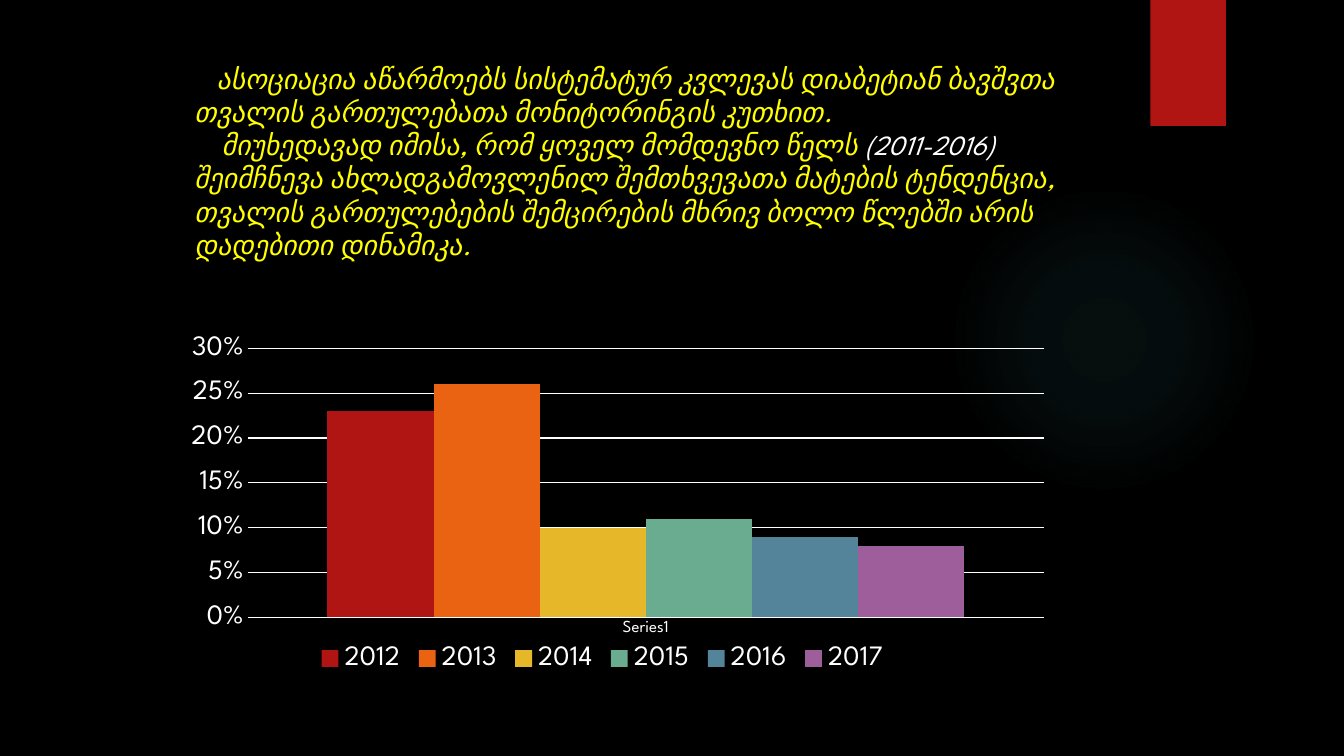
import dataclasses

import lxml.etree
import pptx
import pptx.chart.data
import pptx.dml.color
import pptx.enum.chart
import pptx.enum.shapes
import pptx.enum.text
import pptx.oxml
import pptx.oxml.ns
import pptx.util

Inches = pptx.util.Inches
Pt = pptx.util.Pt
RGB = pptx.dml.color.RGBColor.from_string
qn = pptx.oxml.ns.qn


@dataclasses.dataclass(frozen=True)
class Theme:
    font: str = "League Spartan"
    background: str = "000000"
    text: str = "FFFFFF"
    highlight: str = "FFFF00"
    accent: str = "B01513"
    glow: str = "50B9C1"
    title_size: float = 19.8
    axis_size: int = 20
    category_size: int = 12
    base_size: int = 10
    years: tuple = ("B01513", "EA6312", "E6B729", "6AAC90", "54849A", "9E5E9B")


THEME = Theme()

TITLE = [
    (0.22, [("ასოციაცია აწარმოებს სისტემატურ კვლევას დიაბეტიან ბავშვთა თვალის "
             "გართულებათა მონიტორინგის კუთხით.", THEME.highlight)]),
    (0.27, [("მიუხედავად იმისა, რომ ყოველ მომდევნო წელს ", THEME.highlight),
            ("(2011-2016)", THEME.text),
            (" შეიმჩნევა ახლადგამოვლენილ შემთხვევათა მატების ტენდენცია, თვალის "
             "გართულებების შემცირების მხრივ ბოლო წლებში არის დადებითი დინამიკა.",
             THEME.highlight)]),
]
RATES = {"2012": 0.23, "2013": 0.26, "2014": 0.10,
         "2015": 0.11, "2016": 0.09, "2017": 0.08}
PLOT_LAYOUT = {"x": 0.108, "y": 0.161, "w": 0.88, "h": 0.686}


def style_font(font, size, color):
    font.name = THEME.font
    font.size = Pt(size)
    font.color.rgb = RGB(color)


def add_glow(sp):
    stops = "".join(
        f'<a:gs pos="{pos}000"><a:srgbClr val="{THEME.glow}">'
        f'<a:alpha val="{alpha}000"/></a:srgbClr></a:gs>'
        for pos, alpha in ((0, 7), (36, 6), (69, 0), (100, 0)))
    grad = pptx.oxml.parse_xml(
        f'<a:gradFill {pptx.oxml.ns.nsdecls("a")} rotWithShape="1">'
        f'<a:gsLst>{stops}</a:gsLst><a:path path="circle">'
        '<a:fillToRect l="50000" t="50000" r="50000" b="50000"/>'
        '</a:path></a:gradFill>')
    sp.fill.background()
    no_fill = sp._element.spPr.find(qn("a:noFill"))
    sp._element.spPr.replace(no_fill, grad)


def add_decor(s, left, top, width, height):
    shapes = pptx.enum.shapes.MSO_SHAPE
    glow = s.shapes.add_shape(shapes.OVAL, Inches(left), Inches(top + 1.83),
                              Inches(width), Inches(height - 1.83))
    add_glow(glow)
    ribbon = s.shapes.add_shape(shapes.RECTANGLE, Inches(left + 2), Inches(top),
                                Inches(0.75), Inches(1.25))
    ribbon.fill.solid()
    ribbon.fill.fore_color.rgb = RGB(THEME.accent)
    for sp in (glow, ribbon):
        sp.line.fill.background()
        sp.shadow.inherit = False


def add_title(s, left, top, width, height):
    sp = s.shapes.title
    sp.left, sp.top = Inches(left), Inches(top)
    sp.width, sp.height = Inches(width), Inches(height)
    tf = sp.text_frame
    tf.word_wrap = True
    tf.auto_size = pptx.enum.text.MSO_AUTO_SIZE.NONE
    tf.vertical_anchor = pptx.enum.text.MSO_ANCHOR.BOTTOM
    for i, (indent, runs) in enumerate(TITLE):
        p = tf.add_paragraph() if i else tf.paragraphs[0]
        p.alignment = pptx.enum.text.PP_ALIGN.LEFT
        pPr = p._p.get_or_add_pPr()
        pPr.set("marL", "0")
        pPr.set("indent", str(Inches(indent)))
        for text, color in runs:
            r = p.add_run()
            r.text = text
            style_font(r.font, THEME.title_size, color)
            r.font.italic = True


def fix_plot_layout(chart):
    plot_area = chart._chartSpace.chart.plotArea
    for old in plot_area.findall(qn("c:layout")):
        plot_area.remove(old)
    layout = lxml.etree.Element(qn("c:layout"))
    manual = lxml.etree.SubElement(layout, qn("c:manualLayout"))
    settings = [("layoutTarget", "inner"), ("xMode", "edge"), ("yMode", "edge")]
    for tag, val in settings + list(PLOT_LAYOUT.items()):
        lxml.etree.SubElement(manual, qn(f"c:{tag}")).set("val", str(val))
    plot_area.insert(0, layout)


def add_rate_chart(s, left, top, width, height):
    enums = pptx.enum.chart
    data = pptx.chart.data.CategoryChartData(number_format="0%")
    data.categories = ["Series1"]
    for year, rate in RATES.items():
        data.add_series(year, [rate])
    chart = s.shapes.add_chart(
        enums.XL_CHART_TYPE.COLUMN_CLUSTERED, Inches(left), Inches(top),
        Inches(width), Inches(height), data).chart
    chart.has_title = False
    style_font(chart.font, THEME.base_size, THEME.text)

    plot = chart.plots[0]
    plot.vary_by_categories = False
    plot.gap_width = 150
    plot.overlap = 0
    for series, color in zip(plot.series, THEME.years):
        series.format.fill.solid()
        series.format.fill.fore_color.rgb = RGB(color)

    for axis, size in ((chart.category_axis, THEME.category_size),
                       (chart.value_axis, THEME.axis_size)):
        axis.major_tick_mark = enums.XL_TICK_MARK.NONE
        axis.minor_tick_mark = enums.XL_TICK_MARK.NONE
        axis.format.line.fill.background()
        style_font(axis.tick_labels.font, size, THEME.text)

    rates = chart.value_axis
    rates.minimum_scale, rates.maximum_scale, rates.major_unit = 0, 0.3, 0.05
    rates.tick_labels.number_format = "0%"
    rates.tick_labels.number_format_is_linked = False
    rates.has_major_gridlines = True
    rates.major_gridlines.format.line.color.rgb = RGB(THEME.text)
    rates.major_gridlines.format.line.width = Pt(0.75)

    chart.has_legend = True
    chart.legend.position = enums.XL_LEGEND_POSITION.BOTTOM
    chart.legend.include_in_layout = False
    style_font(chart.legend.font, THEME.axis_size, THEME.text)
    fix_plot_layout(chart)


def main():
    prs = pptx.Presentation()
    prs.slide_width, prs.slide_height = Inches(13.33), Inches(7.5)
    s = prs.slides.add_slide(prs.slide_layouts[5])
    s.background.fill.solid()
    s.background.fill.fore_color.rgb = RGB(THEME.background)
    add_decor(s, 9.41, 0, 3.08, 4.91)
    add_title(s, 1.83, 0.52, 9, 2.12)
    add_rate_chart(s, 1.49, 2.83, 8.97, 3.89)
    prs.save("out.pptx")


if __name__ == "__main__":
    main()
